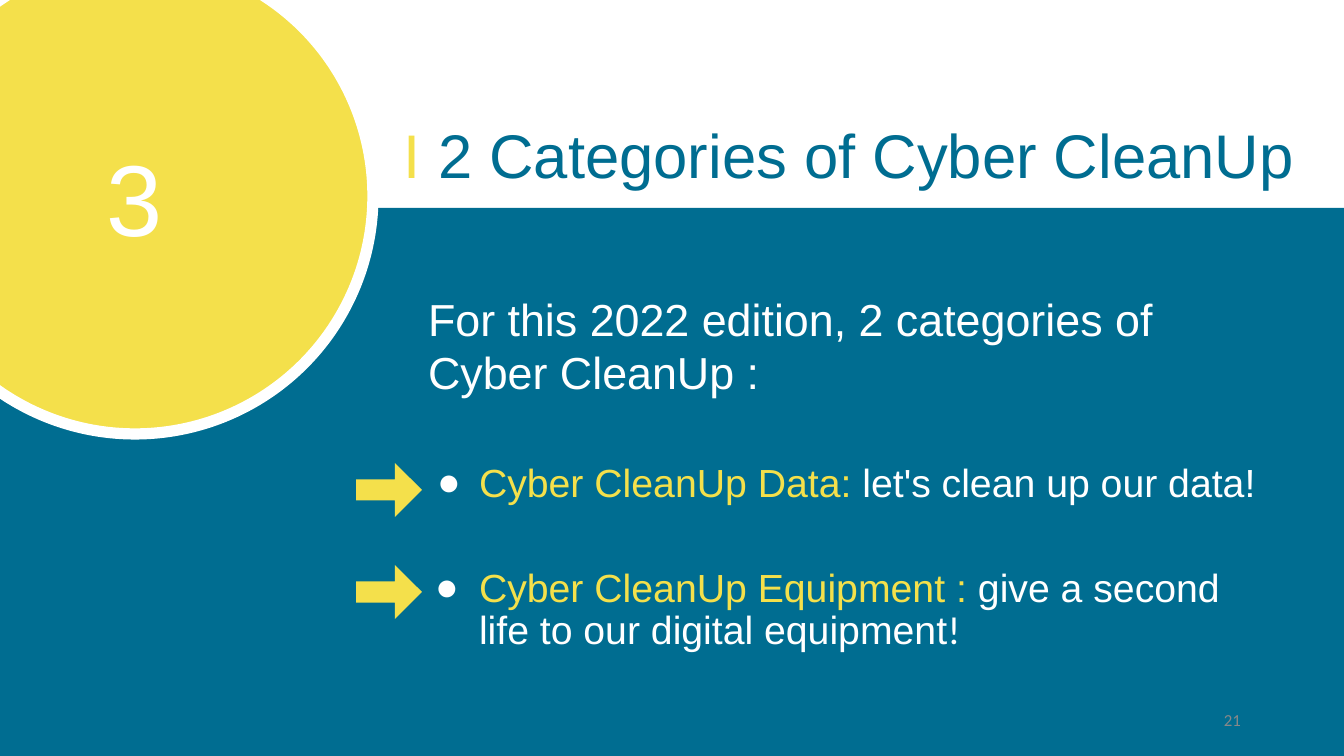
from lxml.etree import SubElement
from pptx import Presentation
from pptx.dml.color import RGBColor
from pptx.enum.shapes import MSO_SHAPE
from pptx.enum.text import MSO_ANCHOR, MSO_AUTO_SIZE, PP_ALIGN
from pptx.oxml.ns import qn
from pptx.util import Emu, Pt

SCALE = 914400 / 134.4
COLORS = {"blue": "006D91", "yellow": "F4E04B", "white": "FFFFFF", "gray": "888888"}


def px(n):
    return Emu(round(n * SCALE))


def color(name):
    return RGBColor.from_string(COLORS[name])


def apply(item, values):
    """Set each attribute named in the dict of format values."""
    for name, value in values.items():
        setattr(item, name, value)


def place(shape, box):
    apply(shape, dict(zip(("left", "top", "width", "height"), map(px, box))))


def set_frame(shape, anchor=MSO_ANCHOR.MIDDLE):
    frame = shape.text_frame
    apply(frame, {
        "word_wrap": True, "auto_size": MSO_AUTO_SIZE.NONE,
        "vertical_anchor": anchor,
        "margin_left": px(10), "margin_right": px(10),
        "margin_top": px(5), "margin_bottom": px(5),
    })
    return frame


def add_run(para, text, size, fill, font="Arial"):
    run = para.add_run()
    run.text = text
    apply(run.font, {"size": Pt(size), "name": font})
    run.font.color.rgb = color(fill)


def add_solid(slide, kind, box, fill):
    shape = slide.shapes.add_shape(kind, *map(px, box))
    shape.shadow.inherit = False
    shape.fill.solid()
    shape.fill.fore_color.rgb = color(fill)
    shape.line.fill.background()
    return shape


def set_bullet(para, hang):
    """Indent the paragraph and hang a white dot, or none if hang is 0."""
    props = para._p.get_or_add_pPr()
    props.set("marL", str(px(51) if hang else 0))
    props.set("indent", str(-px(hang)))
    if hang:
        tint = SubElement(props, qn("a:buClr"))
        SubElement(tint, qn("a:srgbClr"), val=COLORS["white"])
        SubElement(props, qn("a:buFont"), typeface="Arial")
        SubElement(props, qn("a:buChar"), char="●")
    else:
        SubElement(props, qn("a:buNone"))


def add_badge(slide, box, text):
    disc = add_solid(slide, MSO_SHAPE.OVAL, box, "yellow")
    disc.line.color.rgb = color("white")
    disc.line.width = Pt(6)
    para = set_frame(disc).paragraphs[0]
    para.alignment = PP_ALIGN.CENTER
    add_run(para, text, 54, "white")


def fill_title(slide, box):
    title = slide.shapes.title
    slide.shapes._spTree.append(title._element)
    place(title, box)
    para = set_frame(title).paragraphs[0]
    apply(para, {"alignment": PP_ALIGN.LEFT, "line_spacing": 0.9})
    add_run(para, "I", 33, "yellow")
    add_run(para, " 2 Categories of Cyber CleanUp", 33, "blue")


def fill_body(slide, box):
    body = slide.placeholders[1]
    slide.shapes._spTree.append(body._element)
    place(body, box)
    frame = set_frame(body, MSO_ANCHOR.TOP)
    items = [
        (0, 8, [("For this 2022 edition, 2 categories of Cyber CleanUp :", 24, "white"),
                (" ", 27, "white")]),
        (42, 33.6, [("Cyber CleanUp Data: ", 21, "yellow"),
                    ("let's clean up our data!", 21, "white")]),
        (44, 33.6, [("Cyber CleanUp Equipment : ", 21, "yellow"),
                    ("give a second life to our digital equipment", 21, "white"),
                    ("!", 21, "white", "Calibri")]),
    ]
    for i, (hang, gap, runs) in enumerate(items):
        para = frame.add_paragraph() if i else frame.paragraphs[0]
        apply(para, {"alignment": PP_ALIGN.LEFT, "line_spacing": 0.9,
                     "space_before": Pt(gap), "space_after": Pt(0)})
        set_bullet(para, hang)
        for run in runs:
            add_run(para, *run)


def add_arrows(slide, box, count, step):
    left, top, width, height = box
    for i in range(count):
        arrow = add_solid(slide, MSO_SHAPE.RIGHT_ARROW,
                          (left, top + i * step, width, height), "yellow")
        arrow.adjustments[0] = 0.39
        arrow.adjustments[1] = 0.5


def add_number(slide, box, text):
    para = set_frame(slide.shapes.add_textbox(*map(px, box))).paragraphs[0]
    para.alignment = PP_ALIGN.RIGHT
    add_run(para, text, 9, "gray", "Calibri")


def main():
    deck = Presentation()
    apply(deck, {"slide_width": px(1344), "slide_height": px(756)})
    slide = deck.slides.add_slide(deck.slide_layouts[1])
    add_solid(slide, MSO_SHAPE.RECTANGLE, (0, 208, 1344, 548), "blue")
    add_badge(slide, (-103, -42, 476, 476), "3")
    fill_title(slide, (394, 86, 1159, 146))
    fill_body(slide, (418, 293, 857, 378))
    add_arrows(slide, (356, 463, 66, 54), 2, 102)
    add_number(slide, (949, 700, 302, 40), "21")
    deck.save("out.pptx")


if __name__ == "__main__":
    main()
